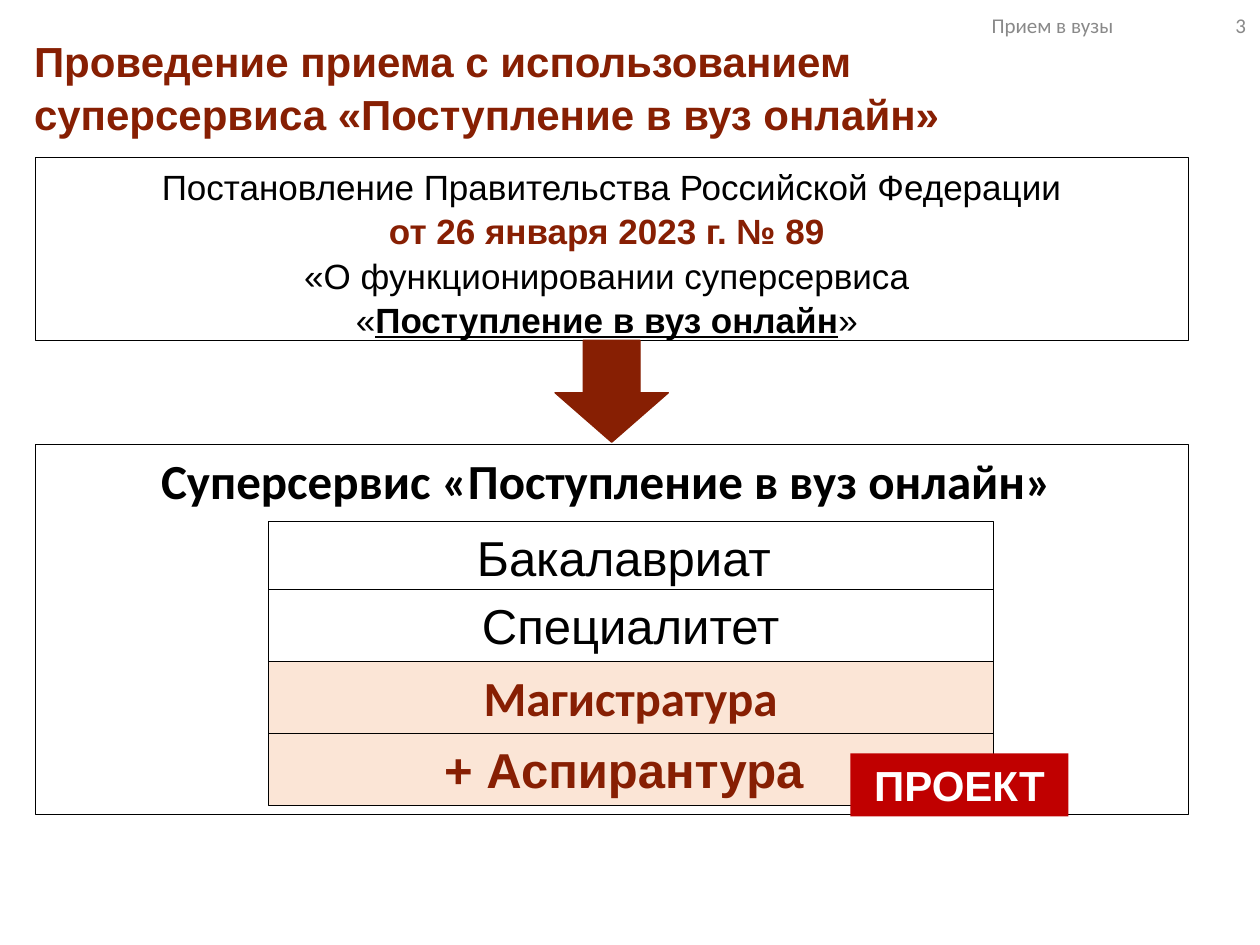
from lxml.etree import SubElement
from pptx import Presentation
from pptx.dml.color import RGBColor
from pptx.enum.shapes import MSO_SHAPE
from pptx.enum.text import MSO_ANCHOR, MSO_AUTO_SIZE, PP_ALIGN
from pptx.oxml.ns import qn
from pptx.util import Inches, Pt

COLORS = {"accent": "871F03", "black": "000000", "white": "FFFFFF",
          "peach": "FBE5D6", "red": "C00000", "grey": "898989"}
LEFT, WIDTH = 0.28, 9.15
LEVELS = [  # text, font, highlighted
    ("Бакалавриат ", "Arial", False),
    ("Специалитет", "Arial", False),
    ("Магистратура", "Calibri", True),
    ("+ Аспирантура ", "Arial", True),
]


def rgb(name):
    return RGBColor.from_string(COLORS[name])


def set_font(para, size, color="black", bold=False, name="Arial"):
    font = para.font
    font.size, font.bold, font.name = Pt(size), bold, name
    font.color.rgb = rgb(color)


def add_block(page, box, fill, line=None, line_width=0.25, kind=MSO_SHAPE.RECTANGLE):
    shape = page.shapes.add_shape(kind, *map(Inches, box))
    shape.shadow.inherit = False
    shape.fill.solid()
    shape.fill.fore_color.rgb = rgb(fill)
    if line:
        shape.line.color.rgb = rgb(line)
        shape.line.width = Pt(line_width)
    else:
        shape.line.fill.background()
    frame = shape.text_frame
    frame.word_wrap = True
    frame.vertical_anchor = MSO_ANCHOR.TOP
    frame.paragraphs[0].alignment = PP_ALIGN.CENTER
    return shape


def add_label(page, box, text, size, fill, line=None, **font):
    para = add_block(page, box, fill, line).text_frame.paragraphs[0]
    para.text = text
    set_font(para, size, **font)


def add_title(page, box):
    title = page.shapes.title
    title.left, title.top, title.width, title.height = map(Inches, box)
    frame = title.text_frame
    frame.text = ("Проведение приема с использованием\n"
                  "суперсервиса «Поступление в вуз онлайн»")
    frame.auto_size = MSO_AUTO_SIZE.NONE
    frame.vertical_anchor = MSO_ANCHOR.TOP
    for para in frame.paragraphs:
        para.alignment = PP_ALIGN.LEFT
        para.line_spacing = 1.05
        para.space_before = Pt(0)
        set_font(para, 24, "accent", True)


def add_decree(page, box):
    frame = add_block(page, box, "white", "black").text_frame
    lines = [
        ["Постановление Правительства Российской Федерации"],
        ["от 26 января 2023 г. № 89 "],
        ["«О функционировании суперсервиса "],
        ["«", "Поступление в вуз онлайн", "» "],
    ]
    for index, parts in enumerate(lines):
        para = frame.add_paragraph() if index else frame.paragraphs[0]
        para.alignment = PP_ALIGN.CENTER
        para.line_spacing = 1.05
        is_date = index == 1
        set_font(para, 20, "accent" if is_date else "black", is_date)
        for part in parts:
            para.add_run().text = part
    service = para.runs[1].font
    service.bold = service.underline = True


def add_arrow(page, box):
    arrow = add_block(page, box, "accent", "accent", 0.75, MSO_SHAPE.DOWN_ARROW)
    arrow.adjustments[1] = 0.485


def add_service(page, box):
    """Frame with its heading, the stacked education levels and the draft badge."""
    left, top, width, height = box
    add_label(page, box, "Суперсервис «Поступление в вуз онлайн» ", 28,
              "white", "black", bold=True, name="Calibri")
    row = 0.57
    first_row = top + height - 0.07 - len(LEVELS) * row
    for index, (text, name, highlighted) in enumerate(LEVELS):
        # The first row tucks slightly under the second one
        row_top = first_row + index * row + (0.03 if index == 0 else 0)
        add_label(page, (left + 1.85, row_top, 5.75, row), text, 28,
                  "peach" if highlighted else "white", "black",
                  color="accent" if highlighted else "black",
                  bold=highlighted, name=name)
    add_label(page, (left + 6.47, top + height - 0.48, 1.73, 0.5),
              "ПРОЕКТ", 24, "red", color="white", bold=True)


def add_header(page, box):
    """Section name and page number, parted by a right-aligned tab stop."""
    frame = page.shapes.add_textbox(*map(Inches, box)).text_frame
    frame.word_wrap = True
    frame.vertical_anchor = MSO_ANCHOR.MIDDLE
    frame.margin_left = Inches(0.82)
    para = frame.paragraphs[0]
    para.text = "Прием в вузы\t3"
    set_font(para, 12, "grey", name="Calibri")
    tabs = SubElement(para._p.get_or_add_pPr(), qn("a:tabLst"))
    SubElement(tabs, qn("a:tab"), pos=str(Inches(2.02)), algn="r")


def main():
    deck = Presentation()
    deck.slide_width, deck.slide_height = Inches(10), Inches(7.5)
    page = deck.slides.add_slide(deck.slide_layouts[5])
    add_title(page, (0.17, 0.21, 9.8, 0.9))
    add_decree(page, (LEFT, 1.25, WIDTH, 1.45))
    add_arrow(page, (LEFT + WIDTH / 2 - 0.45, 2.7, 0.9, 0.81))
    add_service(page, (LEFT, 3.53, WIDTH, 2.93))
    add_header(page, (7.05, 0, 2.95, 0.4))
    deck.save("out.pptx")


if __name__ == "__main__":
    main()
